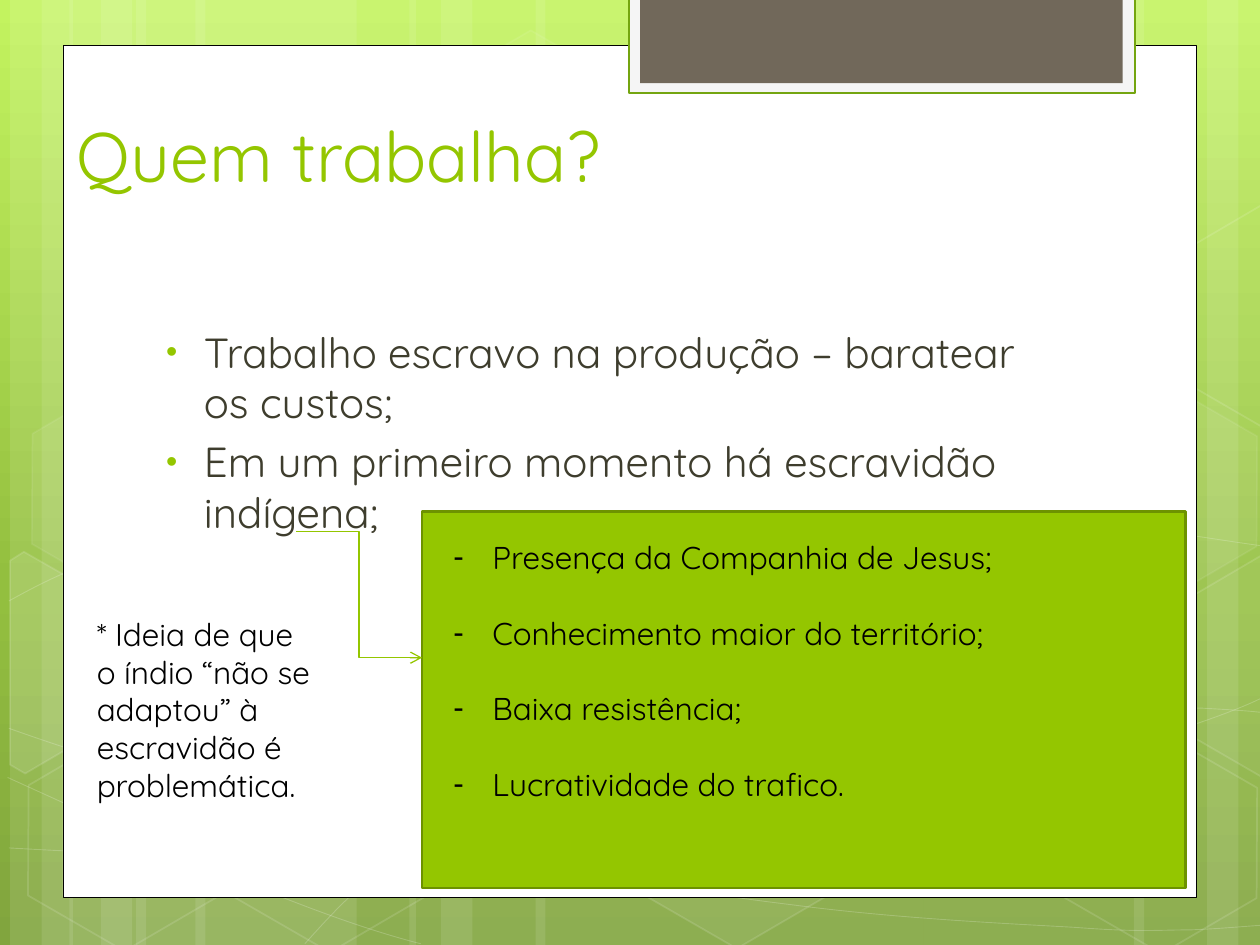
from lxml import etree
from pptx import Presentation
from pptx.dml.color import RGBColor
from pptx.enum.shapes import MSO_CONNECTOR, MSO_SHAPE
from pptx.enum.text import MSO_ANCHOR
from pptx.oxml import parse_xml
from pptx.oxml.ns import nsdecls, qn
from pptx.util import Inches, Pt

WHITE = RGBColor(0xFF, 0xFF, 0xFF)
BLACK = RGBColor(0x00, 0x00, 0x00)
GREEN = RGBColor(0x94, 0xC6, 0x00)
DARK_GREEN = RGBColor(0x6D, 0x92, 0x00)
TAB_GREEN = RGBColor(0x74, 0xA5, 0x10)
TAB_EDGE = RGBColor(0xF5, 0xF5, 0xF5)
BROWN = RGBColor(0x71, 0x68, 0x5A)
BODY = RGBColor(0x3E, 0x3D, 0x2D)
GRADIENT = [(0, "C3F35F"), (62, "93BF3F"), (100, "81A53E")]
FONT = "Quicksand"

# left, width
BANDS = [(1.08, 1.75), (0.08, 0.5), (0.33, 0.83), (1.55, 1.75), (0.55, 0.5),
         (0.8, 0.83), (7.33, 1.75), (9.58, 0.5), (9, 0.83), (4.25, 3.08),
         (3.25, 0.5), (3.5, 0.83)]
# Each curve: a start point, then Bezier segments of two controls and an end
CURVES = [
    [(0.07, 6.73), (0.61, 6.76), (1.15, 6.79), (1.9, 6.78), (2.65, 6.77),
     (3.58, 6.75), (4.58, 6.65), (5.58, 6.55), (7, 6.36), (7.92, 6.17),
     (8.83, 5.98), (9.77, 5.68), (10.07, 5.51)],
    [(0.07, 4.77), (0.36, 4.61), (0.65, 4.46), (1.21, 4.31), (1.78, 4.16),
     (2.59, 3.94), (3.47, 3.87), (4.36, 3.8), (5.44, 3.79), (6.54, 3.87),
     (7.64, 3.95), (9.47, 4.26), (10.07, 4.34)],
    [(0.06, 6.17), (1.27, 6.72), (2.47, 7.27), (3.34, 7.49)],
    [(0.07, 5.78), (0.38, 5.89), (0.7, 6), (1.28, 6.16), (1.86, 6.31),
     (2.73, 6.56), (3.57, 6.73), (4.4, 6.9), (5.45, 7.08), (6.28, 7.18),
     (7.11, 7.29), (8, 7.33), (8.53, 7.36), (9.05, 7.4), (9.19, 7.38),
     (9.45, 7.38), (9.71, 7.37), (9.89, 7.35), (10.07, 7.34)],
    [(2.42, 7.49), (2.6, 7.29), (2.78, 7.09), (3.02, 6.91), (3.26, 6.73),
     (3.6, 6.53), (3.88, 6.39), (4.16, 6.25), (4.33, 6.19), (4.7, 6.09),
     (5.06, 5.99), (5.73, 5.85), (6.08, 5.78), (6.44, 5.71), (6.49, 5.71),
     (6.8, 5.69), (7.11, 5.66), (7.6, 5.63), (7.94, 5.62), (8.29, 5.61),
     (8.86, 5.62), (8.86, 5.62), (9.08, 5.62), (9.31, 5.62), (9.53, 5.62),
     (9.71, 5.63), (9.88, 5.64), (9.97, 5.65), (10.06, 5.66), (10.03, 5.65),
     (10.06, 5.66)],
]
# left, top, fill opacity, line opacity
HEXAGONS = [(3.34, 0.36, 4, 8), (4.97, 5.89, 6, 12), (0.11, 5.91, 0, 12),
            (0.14, 3.12, 7, 8), (1.74, 5.92, 0, 12), (7.53, 4.53, 10, 12),
            (8.34, 5.93, 0, 12), (8.34, 3.14, 7, 8)]
# fill opacity, corners of the hexagons cut by the slide edge
CUT_HEXAGONS = [
    (10, [(0.08, 4.45), (0.19, 4.38), (0.96, 4.82), (0.95, 5.7), (0.2, 6.14), (0.08, 6.07)]),
    (4, [(9.26, 4.85), (10.01, 4.41), (10.09, 4.46), (10.09, 6.13), (10.02, 6.17), (9.26, 5.73)]),
    (0, [(9.26, 2.07), (10.01, 1.63), (10.1, 1.68), (10.09, 3.35), (10.02, 3.39), (9.26, 2.95)]),
]


def set_opacity(fill, percent):
    color = fill._xPr.find(qn("a:solidFill"))[0]
    etree.SubElement(color, qn("a:alpha")).set("val", str(percent * 1000))


def paint(sp, fill=None, line=None, width=1, fill_opacity=100, line_opacity=100):
    sp.shadow.inherit = False
    for part, color, opacity in ((sp.fill, fill, fill_opacity),
                                 (sp.line.fill, line, line_opacity)):
        if color is None or opacity == 0:
            part.background()
            continue
        part.solid()
        part.fore_color.rgb = color
        if opacity < 100:
            set_opacity(part, opacity)
    if line is not None:
        sp.line.width = Pt(width)


def add_box(s, box, shape=MSO_SHAPE.RECTANGLE, **style):
    sp = s.shapes.add_shape(shape, *map(Inches, box))
    paint(sp, **style)
    return sp


def add_outline(s, points, close, **style):
    start, *rest = [(Inches(x), Inches(y)) for x, y in points]
    builder = s.shapes.build_freeform(*start)
    builder.add_line_segments(rest, close=close)
    sp = builder.convert_to_shape()
    paint(sp, **style)
    return sp


def bend(sp):
    """Turn each three line segments of an outline into one Bezier segment."""
    lines = list(sp._element.iter(qn("a:lnTo")))
    for i in range(0, len(lines), 3):
        curve = etree.Element(qn("a:cubicBezTo"))
        lines[i].addprevious(curve)
        for line in lines[i:i + 3]:
            curve.append(line[0])
            line.getparent().remove(line)


def add_background(s):
    s.background.fill.solid()
    solid = s._element.find(".//" + qn("p:bgPr")).find(qn("a:solidFill"))
    stops = "".join(f'<a:gs pos="{pos * 1000}"><a:srgbClr val="{color}"/></a:gs>'
                    for pos, color in GRADIENT)
    solid.getparent().replace(solid, parse_xml(
        f'<a:gradFill {nsdecls("a")} rotWithShape="1"><a:gsLst>{stops}</a:gsLst>'
        '<a:lin ang="5400000" scaled="0"/></a:gradFill>'))


def add_backdrop(s):
    """Faint bands, curves and hexagons over the gradient."""
    for left, width in BANDS:
        add_box(s, (left, 0, width, 7.5), fill=WHITE, fill_opacity=10)
    for nodes in CURVES:
        bend(add_outline(s, nodes, False, line=WHITE, width=0.5, line_opacity=20))
    for left, top, fill_opacity, line_opacity in HEXAGONS:
        sp = add_box(s, (left, top, 1.75, 1.52), MSO_SHAPE.HEXAGON, fill=WHITE, line=WHITE,
                     fill_opacity=fill_opacity, line_opacity=line_opacity)
        sp.adjustments[0] = 0.285
        sp.rotation = 30
    for fill_opacity, corners in CUT_HEXAGONS:
        add_outline(s, corners, True, fill=WHITE, line=WHITE,
                    fill_opacity=fill_opacity, line_opacity=12)


def add_panel(s, box):
    add_box(s, box, fill=WHITE, line=BLACK, width=0.5)
    add_box(s, (4.99, -0.02, 4.02, 0.76), fill=TAB_EDGE, line=TAB_GREEN, width=1.25)
    add_box(s, (5.08, -0.02, 3.83, 0.68), fill=BROWN)


def add_text(s, box, lines, size, color, anchor=MSO_ANCHOR.TOP):
    tf = s.shapes.add_textbox(*map(Inches, box)).text_frame
    tf.word_wrap = True
    tf.vertical_anchor = anchor
    for i, line in enumerate(lines):
        p = tf.paragraphs[0] if i == 0 else tf.add_paragraph()
        r = p.add_run()
        r.text = line
        r.font.name = FONT
        r.font.size = Pt(size)
        r.font.color.rgb = color
    return tf


def add_bullets(tf, char, margin, indent, gap, color=None, size=100):
    for i, p in enumerate(tf.paragraphs):
        if i:
            p.space_before = Pt(gap)
        pPr = p._p.get_or_add_pPr()
        pPr.set("marL", str(Inches(margin)))
        pPr.set("indent", str(Inches(indent)))
        if color is not None:
            clr = etree.SubElement(pPr, qn("a:buClr"))
            etree.SubElement(clr, qn("a:srgbClr")).set("val", str(color))
        etree.SubElement(pPr, qn("a:buSzPct")).set("val", str(size * 1000))
        etree.SubElement(pPr, qn("a:buFont")).set("typeface", "Arial")
        etree.SubElement(pPr, qn("a:buChar")).set("char", char)


def add_reasons(s, box):
    """Green box with its dashed list."""
    left, top, width, _ = box
    add_box(s, box, fill=GREEN, line=DARK_GREEN, width=1.25)
    tf = add_text(s, (left + 0.15, top + 0.16, width - 0.23, 2.22),
                  ["Presença da Companhia de Jesus;", "Conhecimento maior do território;",
                   "Baixa resistência;", "Lucratividade do trafico."], 18, BLACK)
    add_bullets(tf, "-", 0.31, -0.31, 21.6)


def add_arrow(s, start, end):
    cxn = s.shapes.add_connector(MSO_CONNECTOR.ELBOW, *map(Inches, start + end))
    cxn.line.color.rgb = GREEN
    cxn.line.width = Pt(0.75)
    etree.SubElement(cxn.line._get_or_add_ln(), qn("a:tailEnd")).set("type", "arrow")
    etree.SubElement(cxn._element.spPr, qn("a:effectLst"))


def main():
    prs = Presentation()
    prs.slide_width, prs.slide_height = Inches(10), Inches(7.5)
    s = prs.slides.add_slide(prs.slide_layouts[6])
    add_background(s)
    add_backdrop(s)
    add_panel(s, (0.5, 0.36, 9, 6.76))
    add_text(s, (0.51, 0.36, 7.68, 1.25), ["Quem trabalha?"], 40, GREEN, MSO_ANCHOR.BOTTOM)
    tf = add_text(s, (1.14, 2.54, 7.41, 3.84),
                  ["Trabalho escravo na produção – baratear os custos;",
                   "Em um primeiro momento há escravidão indígena;"], 24, BODY)
    add_bullets(tf, "•", 0.38, -0.3, 5, GREEN, 76)
    add_reasons(s, (3.35, 4.06, 6.06, 2.99))
    add_arrow(s, (2.35, 4.22), (3.35, 5.22))
    add_text(s, (0.67, 4.83, 1.97, 1.92),
             ["* Ideia de que o índio “não se adaptou” à escravidão é problemática."], 18, BLACK)
    prs.save("out.pptx")


if __name__ == "__main__":
    main()
